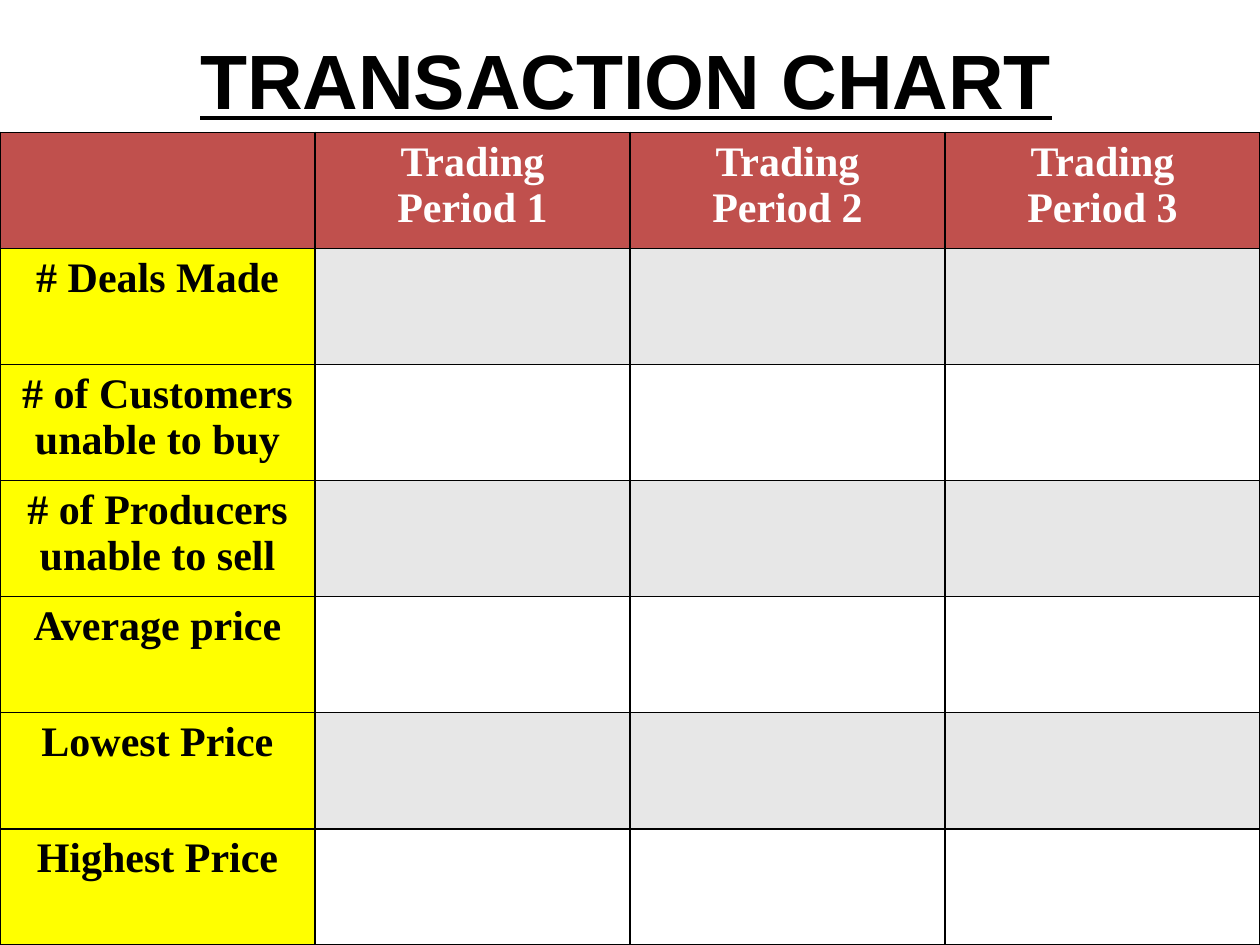
from lxml import etree
from pptx import Presentation
from pptx.dml.color import RGBColor
from pptx.enum.text import MSO_ANCHOR, PP_ALIGN
from pptx.oxml.ns import qn
from pptx.util import Inches, Pt

CENTER = PP_ALIGN.CENTER
MIDDLE = MSO_ANCHOR.MIDDLE

# Content
TITLE = "TRANSACTION CHART"
HEADS = ["", "Trading\nPeriod 1", "Trading\nPeriod 2", "Trading\nPeriod 3"]
LABELS = ["# Deals Made", "# of Customers unable to buy",
          "# of Producers unable to sell", "Average price",
          "Lowest Price", "Highest Price"]

# Theme
THEME = {
    "title": {"name": "Arial", "size": Pt(44), "bold": True, "underline": True},
    "cell": {"name": "Times New Roman", "size": Pt(24), "bold": True},
    "ink": "000000", "paper": "FFFFFF", "head": "C0504D",
    "label": "FFFF00", "band": "E7E7E7", "rule": Pt(1),
}
WIDE, HIGH, TOP = 10, 7.5, 1.05


def style(frame, fonts, color):
    for para in frame.paragraphs:
        para.alignment = CENTER
        for key, value in fonts.items():
            setattr(para.font, key, value)
        para.font.color.rgb = RGBColor.from_string(color)


def border(cell):
    props = cell._tc.get_or_add_tcPr()
    for side in ("lnL", "lnR", "lnT", "lnB"):
        line = etree.SubElement(props, qn(f"a:{side}"), w=str(THEME["rule"]))
        fill = etree.SubElement(line, qn("a:solidFill"))
        etree.SubElement(fill, qn("a:srgbClr"), val=THEME["ink"])


def paint(row, col):
    if row == 0:
        return THEME["head"]
    if col == 0:
        return THEME["label"]
    return THEME["band" if row % 2 else "paper"]


deck = Presentation()
deck.slide_width, deck.slide_height = Inches(WIDE), Inches(HIGH)
slide = deck.slides.add_slide(deck.slide_layouts[5])

# Title
title = slide.shapes.title
title.left, title.top = Inches(0.47), Inches(0)
title.width, title.height = Inches(9), Inches(1.25)
title.text_frame.text = TITLE
title.text_frame.vertical_anchor = MIDDLE
style(title.text_frame, THEME["title"], THEME["ink"])

# Table: first row and first column hold the headings
rows = [HEADS] + [[label] + [""] * (len(HEADS) - 1) for label in LABELS]
table = slide.shapes.add_table(
    len(rows), len(HEADS), Inches(0), Inches(TOP),
    Inches(WIDE), Inches(HIGH - TOP)).table
for r, texts in enumerate(rows):
    for c, text in enumerate(texts):
        cell = table.cell(r, c)
        border(cell)
        cell.fill.solid()
        cell.fill.fore_color.rgb = RGBColor.from_string(paint(r, c))
        cell.text_frame.text = text
        style(cell.text_frame, THEME["cell"], THEME["ink" if r else "paper"])

deck.save("out.pptx")
